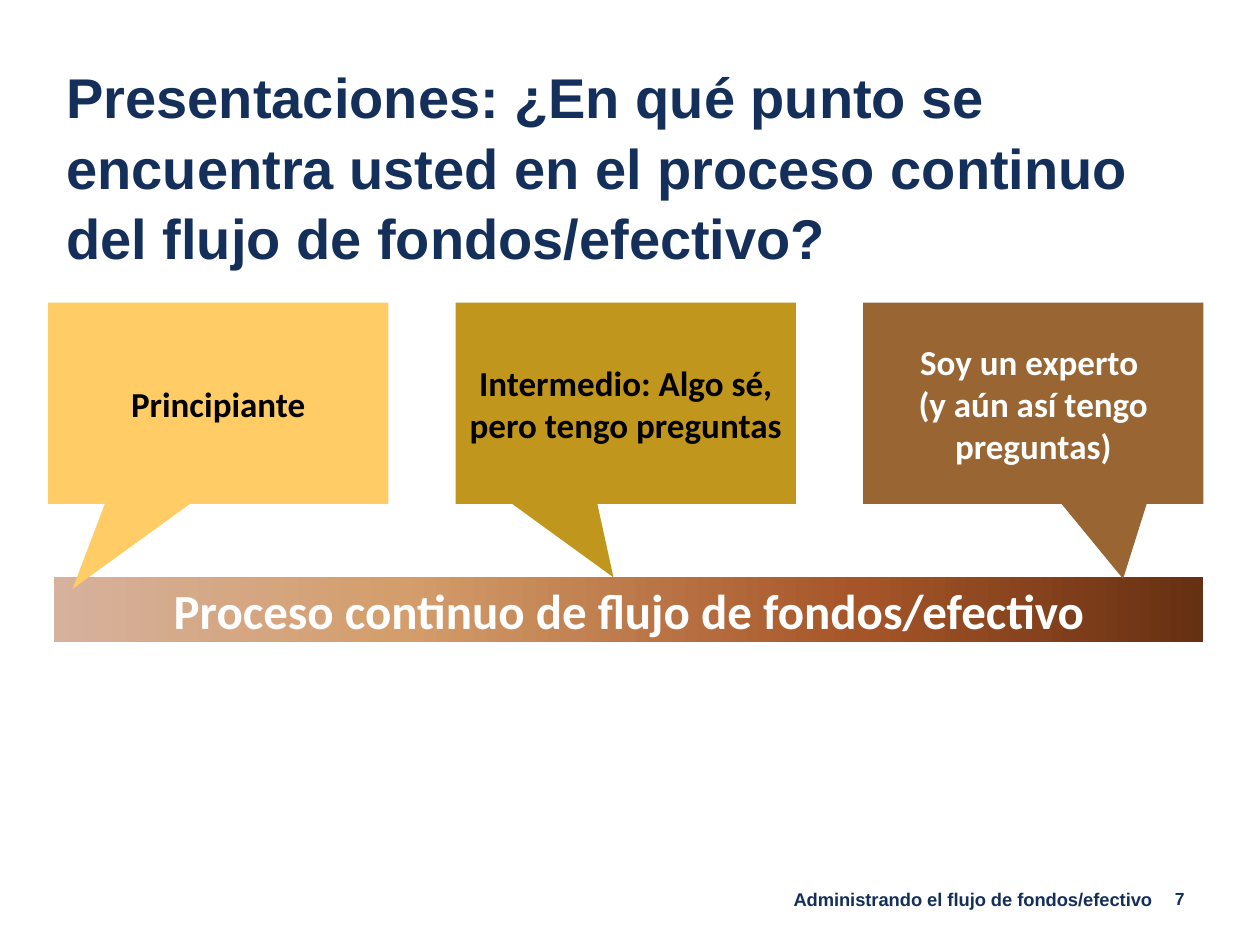
from lxml import etree
from pptx import Presentation
from pptx.dml.color import RGBColor as Rgb
from pptx.enum.shapes import MSO_SHAPE as Form
from pptx.enum.text import MSO_ANCHOR as Anchor, PP_ALIGN as Align
from pptx.oxml.ns import qn
from pptx.util import Cm, Pt

HEX = {
    "navy": "132F5A", "white": "FFFFFF", "black": "000000",
    "sand": "FFCC66", "gold": "C1961C", "brown": "996633",
}
RAMP = [(0, "D6B19C"), (30, "D49E6C"), (70, "A65528"), (100, "663012")]


def write(shape, text, size, color="navy", font="Arial", align=Align.LEFT,
          anchor=Anchor.TOP, space=None):
    frame = shape.text_frame
    frame.word_wrap = True
    frame.vertical_anchor = anchor
    frame.margin_left = frame.margin_right = Cm(0.25)
    frame.margin_top = frame.margin_bottom = Cm(0.13)
    frame.text = text
    para = frame.paragraphs[0]
    para.alignment = align
    para.line_spacing = space
    for run in para.runs:
        run.font.name = font
        run.font.size = Pt(size)
        run.font.bold = True
        run.font.color.rgb = Rgb.from_string(HEX[color])


def block(slide, form, box, text, size, color):
    shape = slide.shapes.add_shape(form, *map(Cm, box))
    shape.shadow.inherit = False
    shape.line.fill.background()
    write(shape, text, size, color, "Calibri", Align.CENTER, Anchor.MIDDLE)
    return shape


def head(slide, left, top, width, height):
    title = slide.shapes.title
    title.left, title.top = Cm(left), Cm(top)
    title.width, title.height = Cm(width), Cm(height)
    write(title, "Presentaciones: ¿En qué punto se encuentra usted en el "
          "proceso continuo del flujo de fondos/efectivo?", 32, space=1.05)


def band(slide, left, top, width, height):
    bar = block(slide, Form.RECTANGLE, (left, top, width, height),
                "Proceso continuo de flujo de fondos/efectivo", 28, "white")
    bar.fill.gradient()
    bar.fill.gradient_angle = 0
    stops = bar.fill._fill._gradFill.find(qn("a:gsLst"))
    for old in list(stops):
        stops.remove(old)
    for pos, color in RAMP:
        stop = etree.SubElement(stops, qn("a:gs"), pos=str(pos * 1000))
        etree.SubElement(stop, qn("a:srgbClr"), val=color)


def calls(slide, left, top, width, height):
    items = [
        ("Principiante", "sand", "black", -0.428, 0.922),
        ("Intermedio: Algo sé, pero tengo preguntas", "gold", "black",
         -0.036, 0.865),
        ("Soy un experto \v(y aún así tengo preguntas)", "brown", "white",
         0.264, 0.872),
    ]
    wide = 6.86
    step = (width - wide) / (len(items) - 1)
    for num, (text, fill, color, tip_x, tip_y) in enumerate(items):
        call = block(slide, Form.RECTANGULAR_CALLOUT,
                     (left + num * step, top, wide, height), text, 20, color)
        call.fill.solid()
        call.fill.fore_color.rgb = Rgb.from_string(HEX[fill])
        call.adjustments[0] = tip_x
        call.adjustments[1] = tip_y


def foot(slide, left, top, width, height):
    parts = [
        (0, 8.81, "Administrando el flujo de fondos/efectivo", 10.5),
        (width - 1.07, 1.07, "7", 10),
    ]
    for shift, wide, text, size in parts:
        box = slide.shapes.add_textbox(
            Cm(left + shift), Cm(top), Cm(wide), Cm(height))
        write(box, text, size, align=Align.RIGHT)


def main():
    deck = Presentation()
    deck.slide_width, deck.slide_height = Cm(25.4), Cm(19.05)
    slide = deck.slides.add_slide(deck.slide_layouts[5])
    head(slide, 1.09, 1.07, 22.86, 1.7)
    band(slide, 1.09, 11.63, 23.17, 1.32)
    calls(slide, 0.97, 6.1, 23.29, 4.06)
    foot(slide, 14.68, 17.78, 9.45, 0.7)
    deck.save("out.pptx")


if __name__ == "__main__":
    main()
